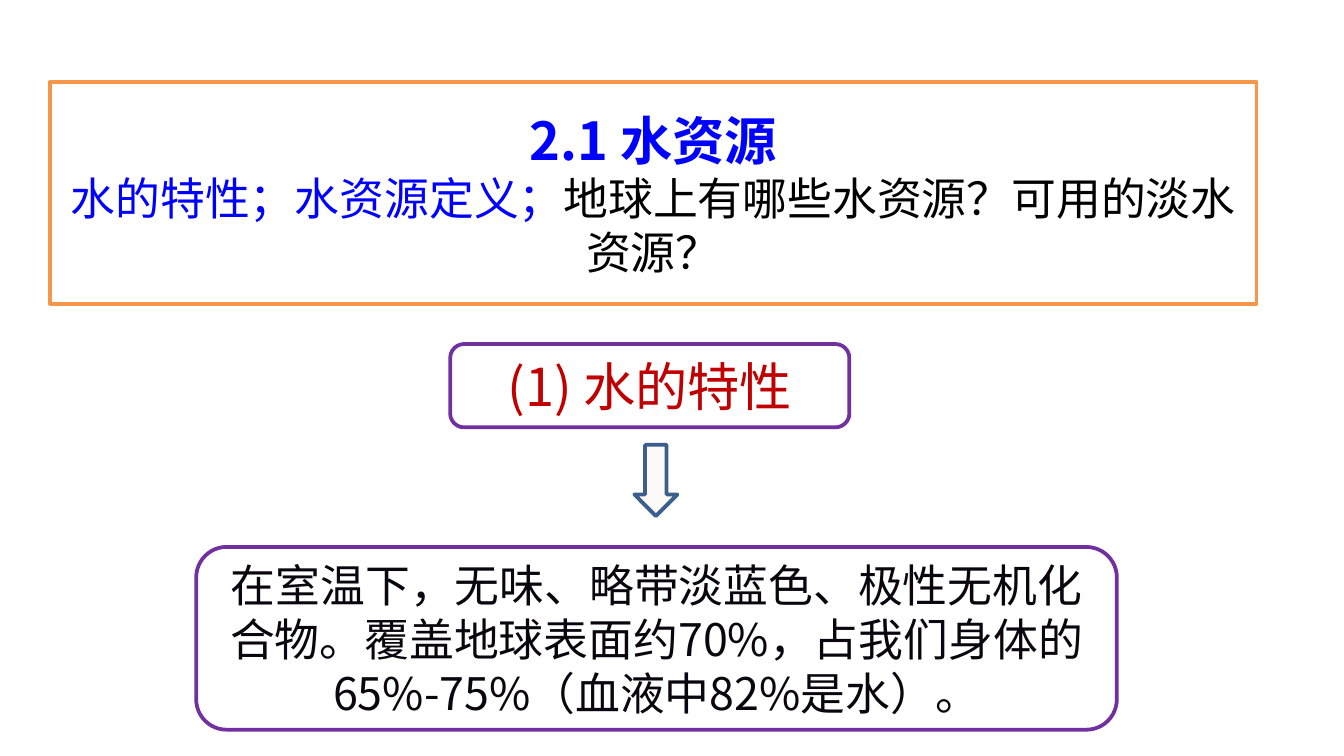
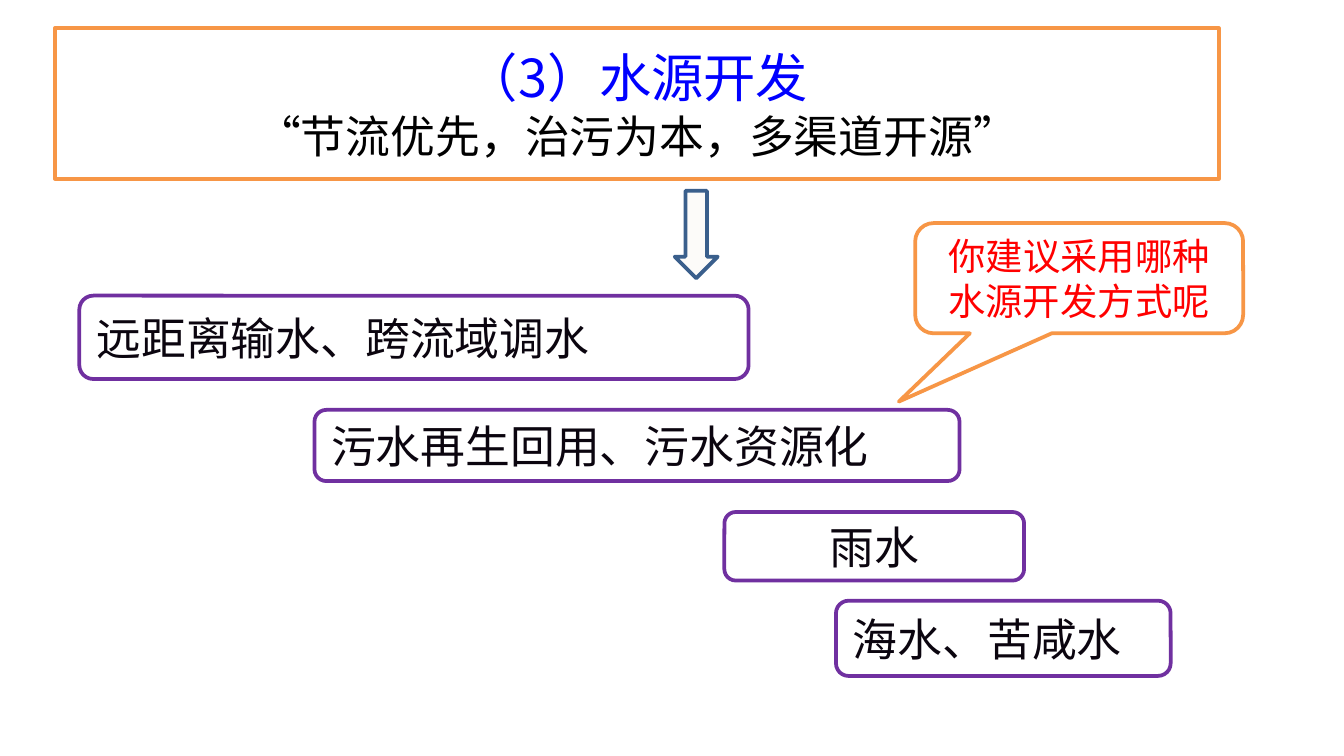
from pptx import Presentation
from pptx.dml.color import RGBColor
from pptx.enum.shapes import MSO_SHAPE
from pptx.enum.text import MSO_ANCHOR, PP_ALIGN
from pptx.oxml.ns import qn
from pptx.util import Inches, Pt
from lxml.etree import SubElement

FONT = "Noto Sans CJK SC"
COLORS = {
    "white": "FFFFFF", "black": "000000", "ink": "0B050F",
    "blue": "0000FF", "red": "FF0000", "dark_red": "C00000",
    "orange": "F79646", "purple": "7030A0",
    "arrow_fill": "FCFBF9", "arrow_line": "3A5F8C",
}


def add_box(s, kind, at, line, fill=None):
    sp = s.shapes.add_shape(kind, *[Inches(v) for v in at])
    sp.shadow.inherit = False
    sp.line.color.rgb = RGBColor.from_string(COLORS[line])
    sp.line.width = Pt(2)
    if fill:
        sp.fill.solid()
        sp.fill.fore_color.rgb = RGBColor.from_string(COLORS[fill])
    else:
        sp.fill.background()
    return sp


def add_text(sp, lines, align=PP_ALIGN.CENTER):
    tf = sp.text_frame
    tf.word_wrap = True
    tf.vertical_anchor = MSO_ANCHOR.MIDDLE
    p = tf.paragraphs[0]
    p.alignment = align
    p.line_spacing = Pt(round(lines[-1][0][1] * 1.2))
    for i, runs in enumerate(lines):
        if i:
            p.add_line_break()
        for text, size, color, bold in runs:
            r = p.add_run()
            r.text = text
            r.font.size = Pt(size)
            r.font.bold = bold
            r.font.name = FONT
            r.font.color.rgb = RGBColor.from_string(COLORS[color])
            SubElement(r.font._element, qn("a:ea")).set("typeface", FONT)


prs = Presentation()
prs.slide_width = Inches(10)
prs.slide_height = Inches(10) * 9 // 16

slides = [
    {
        "title_at": (0.37, 0.61, 8.98, 1.65),
        "title": [
            [("2.1 水资源", 28, "blue", True)],
            [("水的特性；水资源定义；", 24, "blue", False),
             ("地球上有哪些水资源？可用的淡水资源？", 24, "black", False)],
        ],
        "arrow_at": (4.72, 3.31, 0.32, 0.53),
        "boxes": [
            ((3.35, 2.56, 2.97, 0.62), "(1) 水的特性", 28, "dark_red", PP_ALIGN.CENTER),
            ((1.46, 4.07, 6.85, 1.36),
             "在室温下，无味、略带淡蓝色、极性无机化合物。覆盖地球表面约70%，占我们身体的65%-75%（血液中82%是水）。",
             24, "ink", PP_ALIGN.CENTER),
        ],
    },
    {
        "title_at": (0.41, 0.21, 8.66, 1.12),
        "title": [
            [("（3）水源开发", 28, "blue", False)],
            [("“节流优先，治污为本，多渠道开源”", 24, "black", False)],
        ],
        "arrow_at": (5.02, 1.42, 0.32, 0.65),
        "boxes": [
            ((0.59, 2.2, 4.98, 0.62), "远距离输水、跨流域调水", 24, "ink", PP_ALIGN.LEFT),
            ((2.34, 3.05, 4.8, 0.53), "污水再生回用、污水资源化", 24, "ink", PP_ALIGN.LEFT),
            ((5.39, 3.81, 2.23, 0.51), "雨水", 24, "ink", PP_ALIGN.CENTER),
            ((6.22, 4.47, 2.49, 0.56), "海水、苦咸水", 24, "ink", PP_ALIGN.LEFT),
        ],
    },
]

for content in slides:
    s = prs.slides.add_slide(prs.slide_layouts[6])
    title = add_box(s, MSO_SHAPE.RECTANGLE, content["title_at"], "orange", "white")
    title.text_frame.margin_top = Inches(0.12)
    add_text(title, content["title"])
    for at, text, size, color, align in content["boxes"]:
        box = add_box(s, MSO_SHAPE.ROUNDED_RECTANGLE, at, "purple")
        add_text(box, [[(text, size, color, False)]], align)
    add_box(s, MSO_SHAPE.DOWN_ARROW, content["arrow_at"], "arrow_line", "arrow_fill")

callout = add_box(s, MSO_SHAPE.ROUNDED_RECTANGULAR_CALLOUT,
                  (6.81, 1.66, 2.44, 0.82), "orange", "white")
callout.adjustments[0] = -0.55
callout.adjustments[1] = 1.12
add_text(callout, [[("你建议采用哪种水源开发方式呢", 20, "red", False)]])

prs.save("out.pptx")
